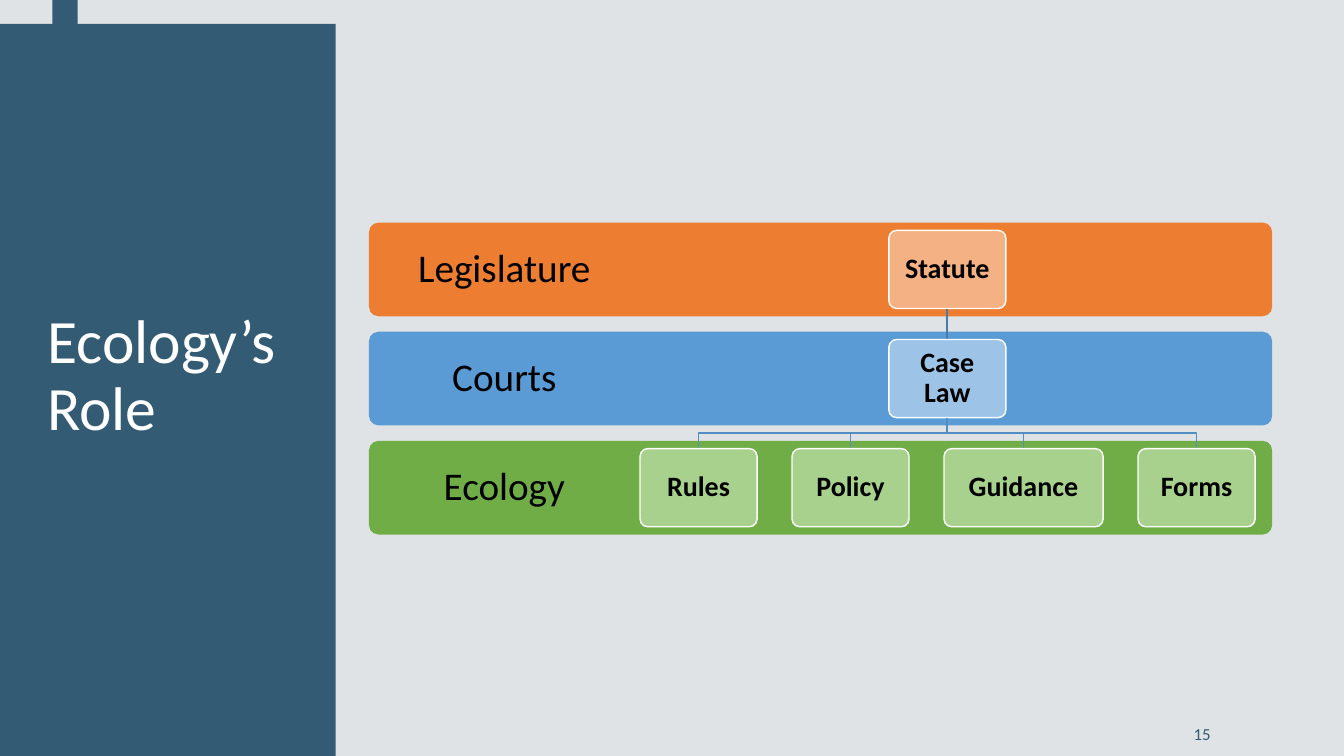
from typing import NamedTuple

from lxml.etree import SubElement
from pptx import Presentation
from pptx.dml.color import RGBColor
from pptx.enum.shapes import MSO_CONNECTOR, MSO_SHAPE
from pptx.enum.text import MSO_ANCHOR, MSO_AUTO_SIZE, PP_ALIGN
from pptx.oxml.ns import qn
from pptx.util import Cm, Pt

COLORS = {
    "page": "DFE3E5", "panel": "335B74", "white": "FFFFFF", "black": "000000",
    "orange": "ED7D31", "peach": "F4B183", "blue": "5B9BD5", "sky": "9DC3E6",
    "green": "70AD47", "mint": "A9D18E", "stem": "497CAB", "branch": "538DC1",
}
BAND_LEFT, BAND_TOP, BAND_WIDTH, BAND_HEIGHT = 9.3, 5.61, 22.76, 2.36
PITCH = 2.75
CARD_HEIGHT, CARD_GAP = 1.97, 0.88
CARD_INSET = (BAND_HEIGHT - CARD_HEIGHT) / 2
TRUNK = 23.87


class Card(NamedTuple):
    text: str
    width: float = 2.95


class Level(NamedTuple):
    name: str
    band: str
    tint: str
    left: float
    cards: list[Card]


LEVELS = [
    Level("Legislature", "orange", "peach", 22.4, [Card("Statute")]),
    Level("Courts", "blue", "sky", 22.4, [Card("Case Law")]),
    Level("Ecology", "green", "mint", 16.13,
          [Card("Rules"), Card("Policy"), Card("Guidance", 4.01), Card("Forms")]),
]


def rgb(name: str) -> RGBColor:
    return RGBColor.from_string(COLORS[name])


def write(shape, text: str, size: float, color: str = "black", bold: bool = False,
          align=PP_ALIGN.CENTER, spacing: float = 0.9, insets=(0.25, 0.13, 0.25, 0.13)):
    """Fill a shape with one paragraph; insets run left, top, right, bottom."""
    frame = shape.text_frame
    frame.word_wrap = True
    frame.auto_size = MSO_AUTO_SIZE.NONE
    frame.vertical_anchor = MSO_ANCHOR.MIDDLE
    (frame.margin_left, frame.margin_top,
     frame.margin_right, frame.margin_bottom) = map(Cm, insets)
    para = frame.paragraphs[0]
    para.alignment = align
    para.line_spacing = spacing
    run = para.add_run()
    run.text = text
    font = run.font
    font.name, font.size, font.bold = "Calibri", Pt(size), bold
    font.color.rgb = rgb(color)


def box(slide, left: float, top: float, width: float, height: float, fill: str,
        kind=MSO_SHAPE.ROUNDED_RECTANGLE, line: str | None = None):
    shape = slide.shapes.add_shape(kind, Cm(left), Cm(top), Cm(width), Cm(height))
    shape.shadow.inherit = False
    shape.fill.solid()
    shape.fill.fore_color.rgb = rgb(fill)
    if kind == MSO_SHAPE.ROUNDED_RECTANGLE:
        shape.adjustments[0] = 0.1
    if line:
        shape.line.color.rgb = rgb(line)
        shape.line.width = Pt(1)
    else:
        shape.line.fill.background()
    return shape


def stem(slide, top: float, bottom: float):
    link = slide.shapes.add_connector(
        MSO_CONNECTOR.STRAIGHT, Cm(TRUNK), Cm(top), Cm(TRUNK), Cm(bottom))
    link.line.color.rgb = rgb("stem")
    link.line.width = Pt(1)
    SubElement(link._element.spPr, qn("a:effectLst"))


def branch(slide, x: float, top: float, bottom: float):
    """Draw a stepped line from the trunk to the card centred at x."""
    middle = (top + bottom) / 2
    pen = slide.shapes.build_freeform(Cm(TRUNK), Cm(top))
    pen.add_line_segments(
        [(Cm(TRUNK), Cm(middle)), (Cm(x), Cm(middle)), (Cm(x), Cm(bottom))], close=False)
    shape = pen.convert_to_shape()
    shape.shadow.inherit = False
    shape.fill.background()
    shape.line.color.rgb = rgb("branch")
    shape.line.width = Pt(1)


def draw_cards(slide, row: int, level: Level):
    top = BAND_TOP + row * PITCH + CARD_INSET
    above = top - PITCH + CARD_HEIGHT
    left = level.left
    for card in level.cards:
        if row == 1:
            stem(slide, above, top)
        elif row > 1:
            branch(slide, left + card.width / 2, above, top)
        shape = box(slide, left, top, card.width, CARD_HEIGHT, level.tint, line="white")
        write(shape, card.text, 20, bold=True, insets=(0.2,) * 4)
        left += card.width + CARD_GAP


def main():
    deck = Presentation()
    deck.slide_width, deck.slide_height = Cm(33.87), Cm(19.05)
    slide = deck.slides.add_slide(deck.slide_layouts[5])
    slide.background.fill.solid()
    slide.background.fill.fore_color.rgb = rgb("page")

    box(slide, 1.32, 0, 0.64, 19.05, "panel", MSO_SHAPE.RECTANGLE)
    box(slide, 0, 0.6, 8.46, 18.45, "panel", MSO_SHAPE.RECTANGLE)

    for row, level in enumerate(LEVELS):
        band = box(slide, BAND_LEFT, BAND_TOP + row * PITCH,
                   BAND_WIDTH, BAND_HEIGHT, level.band)
        write(band, level.name, 28, insets=(0.5, 0.2, 16.44, 0.2))
    for row, level in enumerate(LEVELS):
        draw_cards(slide, row, level)

    number = slide.shapes.add_textbox(Cm(26.31), Cm(17.93), Cm(4.45), Cm(1.12))
    write(number, "15", 12, "panel", align=PP_ALIGN.RIGHT, spacing=1.0)

    title = slide.shapes.title
    title.left, title.top, title.width, title.height = map(Cm, (0.94, 1.9, 6.73, 15.21))
    write(title, "Ecology’s Role", 44, "white", align=PP_ALIGN.LEFT)
    slide.shapes._spTree.append(title._element)  # bring in front of the panel

    deck.save("out.pptx")


if __name__ == "__main__":
    main()
